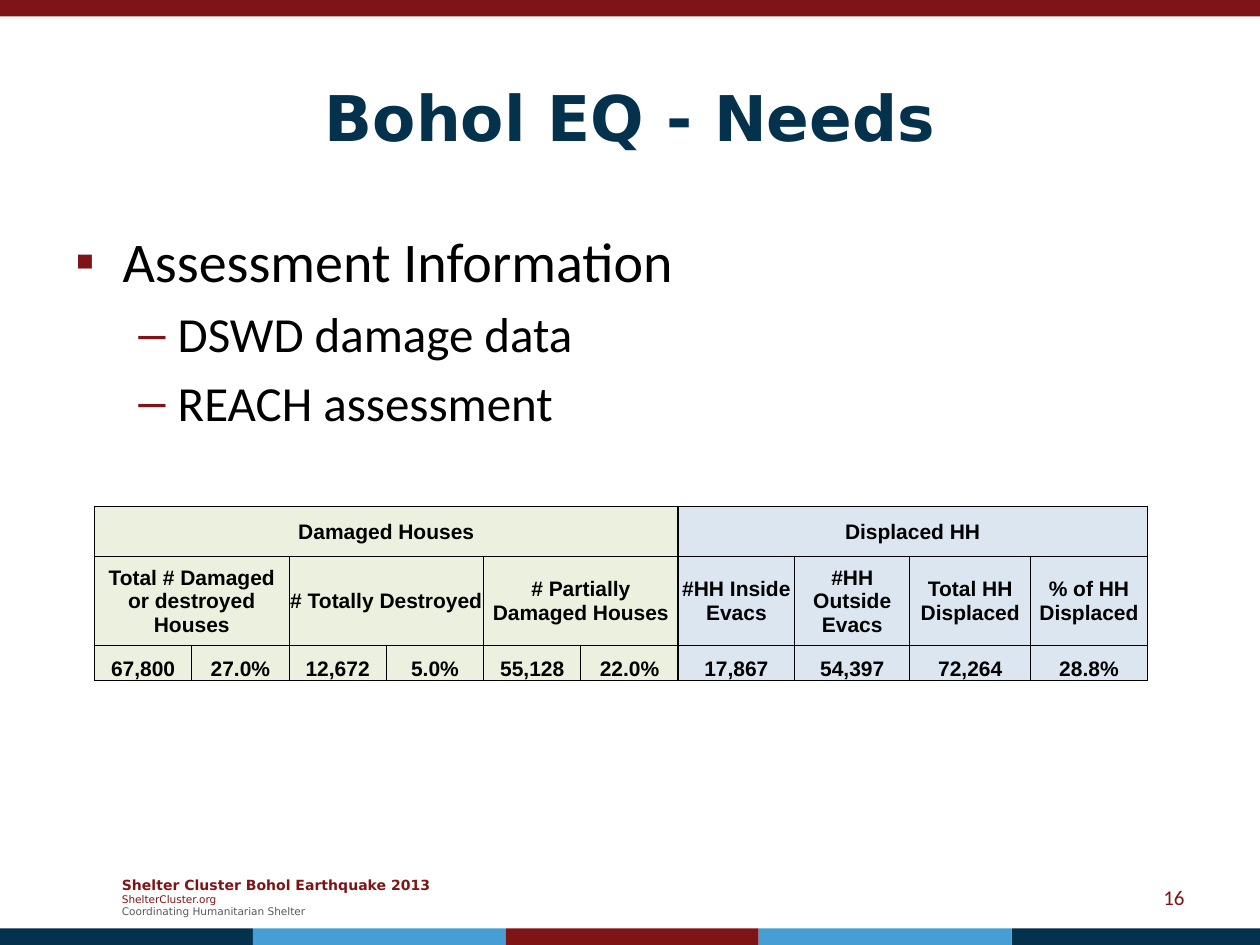
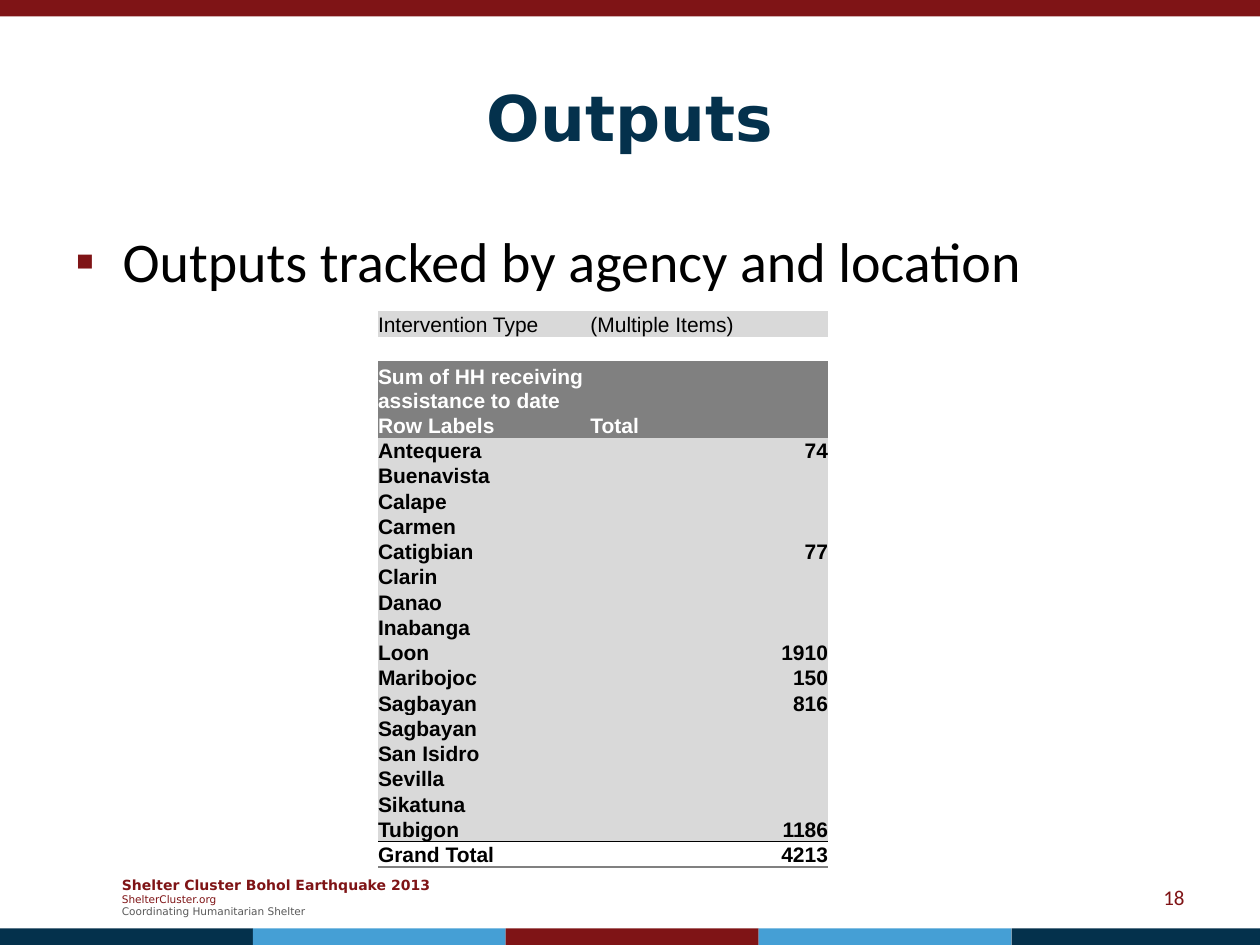
from dataclasses import dataclass

import lxml.etree
import pptx
import pptx.dml.color
import pptx.enum.shapes
import pptx.enum.text
import pptx.oxml.ns
import pptx.util

Pt = pptx.util.Pt
ALIGN = pptx.enum.text.PP_ALIGN
ANCHOR = pptx.enum.text.MSO_ANCHOR
qn = pptx.oxml.ns.qn

COLORS = {
    "red": "7F1416", "navy": "04314C", "blue": "459FD5", "black": "000000",
    "white": "FFFFFF", "text": "595959", "green": "EBF1DE", "ice": "DCE6F1",
    "pale": "D9D9D9", "gray": "808080",
}
WIDE, HIGH = 720, 540
BAND = 9.4
NO_STYLE = "{2D5ABB26-0587-4C30-8999-92F81FD0307C}"


@dataclass
class Box:
    x: float
    y: float
    w: float
    h: float

    def place(self) -> tuple:
        return Pt(self.x), Pt(self.y), Pt(self.w), Pt(self.h)


@dataclass
class Style:
    font: str
    size: float
    color: str
    bold: bool = False
    align: ALIGN = ALIGN.LEFT


@dataclass
class Bullet:
    mark: str
    level: int
    left: float
    hang: float
    gap: float


@dataclass
class Line:
    text: str
    style: Style
    bullet: Bullet | None = None


TITLE = Style("DejaVu Sans", 36, "navy", True, ALIGN.CENTER)
NUMBER = Style("Calibri", 12, "red", align=ALIGN.RIGHT)
MAIN = Style("Calibri", 32, "black")
SUB = Style("Calibri", 28, "black")
SQUARE = Bullet("▪", 0, 27, 27, 0)
DASH = Bullet("–", 1, 58.5, 22.5, 5.6)
FOOTER = [
    Line("Shelter Cluster Bohol Earthquake 2013", Style("DejaVu Sans", 8, "red", True)),
    Line("ShelterCluster.org", Style("DejaVu Sans", 6, "red")),
    Line("Coordinating Humanitarian Shelter", Style("DejaVu Sans", 6, "text")),
]
STRIPES = ["navy", "blue", "red", "blue", "navy"]

CELL = Style("Arial", 12, "black", True, ALIGN.CENTER)
GROUPS = [("Damaged Houses", 0, 5), ("Displaced HH", 6, 9)]
HEADS = [
    ("Total # Damaged or destroyed Houses", 0, 1), ("# Totally Destroyed", 2, 3),
    ("# Partially Damaged Houses", 4, 5), ("#HH Inside Evacs", 6, 6),
    ("#HH Outside Evacs", 7, 7), ("Total HH Displaced", 8, 8),
    ("% of HH Displaced", 9, 9),
]
FIGURES = ["67,800", "27.0%", "12,672", "5.0%", "55,128", "22.0%",
           "17,867", "54,397", "72,264", "28.8%"]
TOWNS = [
    ("Antequera", "74"), ("Buenavista", ""), ("Calape", ""), ("Carmen", ""),
    ("Catigbian", "77"), ("Clarin", ""), ("Danao", ""), ("Inabanga", ""),
    ("Loon", "1910"), ("Maribojoc", "150"), ("Sagbayan", "816"), ("Sagbayan", ""),
    ("San Isidro", ""), ("Sevilla", ""), ("Sikatuna", ""), ("Tubigon", "1186"),
]


def rgb(name: str) -> pptx.dml.color.RGBColor:
    return pptx.dml.color.RGBColor.from_string(COLORS[name])


def add_mark(para, mark: Bullet) -> None:
    props = para._p.get_or_add_pPr()
    props.set("lvl", str(mark.level))
    props.set("marL", str(Pt(mark.left)))
    props.set("indent", str(-Pt(mark.hang)))
    tint = lxml.etree.SubElement(props, qn("a:buClr"))
    lxml.etree.SubElement(tint, qn("a:srgbClr"), val=COLORS["red"])
    lxml.etree.SubElement(props, qn("a:buFont"), typeface="Arial")
    lxml.etree.SubElement(props, qn("a:buChar"), char=mark.mark)
    if mark.gap:
        para.space_before = Pt(mark.gap)


def write(para, line: Line) -> None:
    if line.bullet:
        add_mark(para, line.bullet)
    style = line.style
    para.alignment = style.align
    font = para.font
    font.name, font.size, font.bold = style.font, Pt(style.size), style.bold
    font.color.rgb = rgb(style.color)
    if line.text:
        para.add_run().text = line.text
    else:
        lxml.etree.SubElement(para._p, qn("a:endParaRPr"), sz=str(int(style.size * 100)))


def add_text(slide, box: Box, lines: list[Line], anchor=ANCHOR.MIDDLE) -> None:
    frame = slide.shapes.add_textbox(*box.place()).text_frame
    frame.word_wrap = True
    frame.vertical_anchor = anchor
    for i, line in enumerate(lines):
        write(frame.add_paragraph() if i else frame.paragraphs[0], line)


def add_band(slide, box: Box, color: str) -> None:
    kind = pptx.enum.shapes.MSO_SHAPE.RECTANGLE
    band = slide.shapes.add_shape(kind, *box.place())
    band.shadow.inherit = False
    band.fill.solid()
    band.fill.fore_color.rgb = rgb(color)
    band.line.fill.background()


def add_page(deck, title: str, number: str, body: list[Line]):
    """Add a slide with the shared bands, footer, title and body."""
    slide = deck.slides.add_slide(deck.slide_layouts[6])
    add_text(slide, Box(62.6, 496.8, 196, 31.7), FOOTER)
    add_band(slide, Box(0, 0, WIDE, BAND), "red")
    step = 144.5
    for i, color in enumerate(STRIPES):
        left = i * step
        add_band(slide, Box(left, HIGH - BAND, min(step, WIDE - left), BAND), color)
    add_text(slide, Box(36, 21.6, 648, 90), [Line(title, TITLE)])
    add_text(slide, Box(36, 126, 648, 138), body, ANCHOR.TOP)
    add_text(slide, Box(516, 498.2, 168, 28.8), [Line(number, NUMBER)])
    return slide


def add_grid(slide, x: float, y: float, cols: list[float], rows: list[float]):
    """Add a table without any built-in style."""
    box = Box(x, y, sum(cols), sum(rows))
    grid = slide.shapes.add_table(len(rows), len(cols), *box.place()).table
    grid.first_row = grid.horz_banding = False
    grid._tbl.tblPr.find(qn("a:tableStyleId")).text = NO_STYLE
    for col, width in zip(grid.columns, cols):
        col.width = Pt(width)
    for row, height in zip(grid.rows, rows):
        row.height = Pt(height)
    return grid


def fill_cell(cell, text: str, style: Style, fill: str = "",
              pad: float = 0, anchor=ANCHOR.BOTTOM) -> None:
    cell.margin_left = cell.margin_right = cell.margin_top = Pt(pad)
    cell.margin_bottom = 0
    cell.vertical_anchor = anchor
    if fill:
        cell.fill.solid()
        cell.fill.fore_color.rgb = rgb(fill)
    else:
        cell.fill.background()
    write(cell.text_frame.paragraphs[0], Line(text, style))


def edge_cell(cell, **edges: tuple[str, float]) -> None:
    """Draw borders, given as L, R, T, B with colour and width."""
    props = cell._tc.get_or_add_tcPr()
    sides = [side for side in "LRTB" if side in edges]
    for i, side in enumerate(sides):
        color, width = edges[side]
        line = lxml.etree.Element(qn(f"a:ln{side}"), w=str(Pt(width)))
        solid = lxml.etree.SubElement(line, qn("a:solidFill"))
        lxml.etree.SubElement(solid, qn("a:srgbClr"), val=COLORS[color])
        props.insert(i, line)


def add_needs(slide) -> None:
    cols = [55.6] * 6 + [66.6, 65.8, 69.1, 66.6]
    grid = add_grid(slide, 54, 289.5, cols, [28.2, 51, 20.2])
    cells = [(name, i, i) for i, name in enumerate(FIGURES)]
    for r, row in enumerate([GROUPS, HEADS, cells]):
        for text, start, end in row:
            cell = grid.cell(r, start)
            if end > start:
                cell.merge(grid.cell(r, end))
            low = r == 2
            fill_cell(cell, text, CELL, "green" if start < 6 else "ice",
                      0 if low else 0.7, ANCHOR.BOTTOM if low else ANCHOR.MIDDLE)
        for c in range(len(cols)):
            edge_cell(grid.cell(r, c),
                      L=("black", 1 if c in (0, 6) else 0.5),
                      R=("black", 1 if c in (5, 9) else 0.5),
                      T=("black", 0.5 if r else 1), B=("black", 0.5))


def add_outputs(slide) -> None:
    plain = Style("Arial", 12, "black")
    head = Style("Arial", 12, "white", True)
    name = Style("Arial", 12, "black", True)
    value = Style("Arial", 12, "black", True, ALIGN.RIGHT)
    rows = [
        (("Intervention Type", "(Multiple Items)"), (plain, plain), "pale"),
        (("", ""), (plain, plain), ""),
        (("Sum of HH receiving assistance to date", ""), (head, head), "gray"),
        (("Row Labels", "Total"), (head, head), "gray"),
        *((town, (name, value), "pale") for town in TOWNS),
        (("Grand Total", "4213"), (name, value), ""),
    ]
    last = len(rows) - 1
    gray, thin = ("gray", 1), ("black", 0.5)
    edges = {1: {"B": gray}, 2: {"T": gray}, last - 1: {"B": thin},
             last: {"T": thin, "B": gray}}
    grid = add_grid(slide, 216, 178, [121.4, 135.8], [12.2] * len(rows))
    for r, (texts, styles, fill) in enumerate(rows):
        for c, (text, style) in enumerate(zip(texts, styles)):
            fill_cell(grid.cell(r, c), text, style, fill)
            edge_cell(grid.cell(r, c), **edges.get(r, {}))


def main() -> None:
    deck = pptx.Presentation()
    deck.slide_width, deck.slide_height = Pt(WIDE), Pt(HIGH)
    add_needs(add_page(deck, "Bohol EQ - Needs", "16", [
        Line("Assessment Information", MAIN, SQUARE),
        Line("DSWD damage data", SUB, DASH),
        Line("REACH assessment", SUB, DASH),
    ]))
    add_outputs(add_page(deck, "Outputs", "18", [
        Line("Outputs tracked by agency and location", MAIN, SQUARE),
    ]))
    deck.save("out.pptx")


if __name__ == "__main__":
    main()
